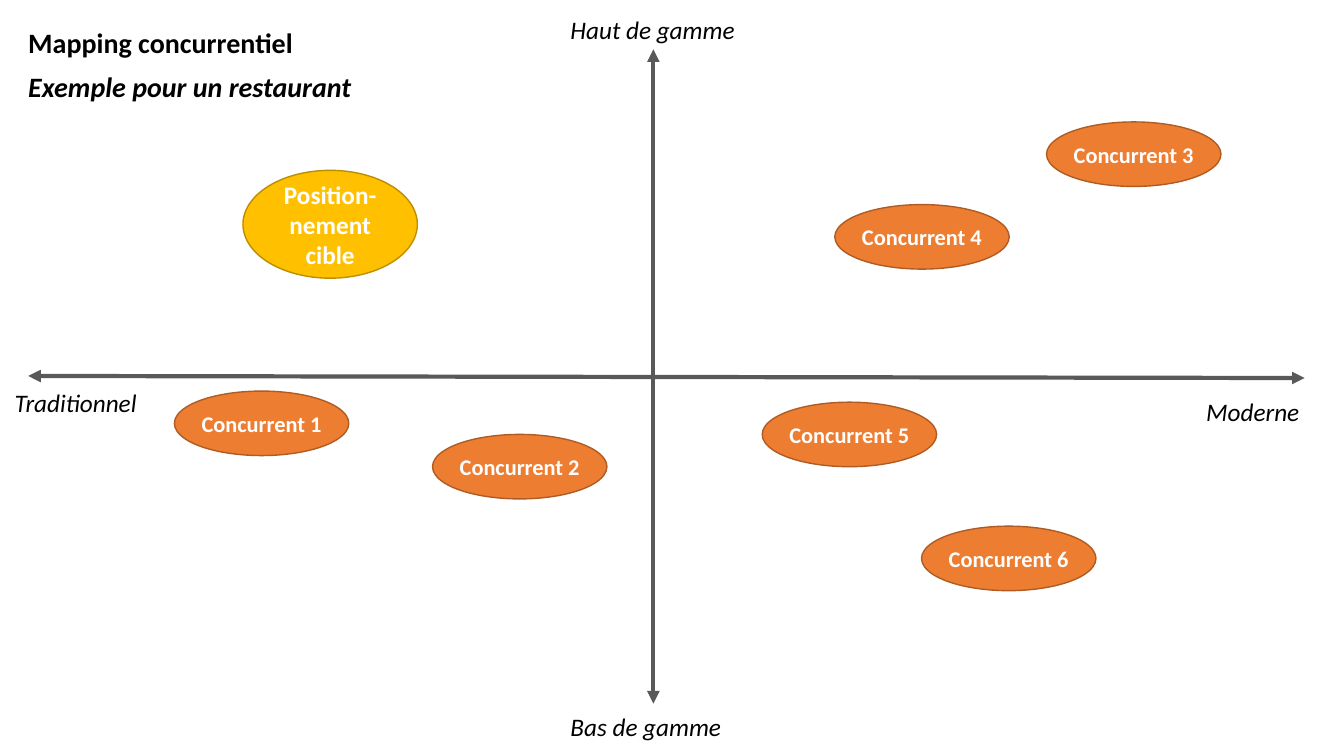
from lxml import etree
from pptx import Presentation
from pptx.dml.color import RGBColor
from pptx.enum.shapes import MSO_CONNECTOR, MSO_SHAPE
from pptx.enum.text import MSO_ANCHOR, MSO_AUTO_SIZE, PP_ALIGN
from pptx.oxml.ns import qn
from pptx.util import Inches, Pt

STRAIGHT = MSO_CONNECTOR.STRAIGHT
OVAL = MSO_SHAPE.OVAL
TOP, MIDDLE = MSO_ANCHOR.TOP, MSO_ANCHOR.MIDDLE
LEFT, CENTER = PP_ALIGN.LEFT, PP_ALIGN.CENTER

BLACK = RGBColor(0x00, 0x00, 0x00)
WHITE = RGBColor(0xFF, 0xFF, 0xFF)
GREY = RGBColor(0x59, 0x59, 0x59)
ORANGE = RGBColor(0xED, 0x7D, 0x31)
DARK_ORANGE = RGBColor(0xAF, 0x5C, 0x24)
GOLD = RGBColor(0xFF, 0xC0, 0x00)
DARK_GOLD = RGBColor(0xBD, 0x8E, 0x00)

OVAL_WIDTH = 1.73


def format_text(p, size, color, align, bold=False, italic=False):
    p.alignment = align
    for r in p.runs:
        r.font.name = "Calibri"
        r.font.size = Pt(size)
        r.font.color.rgb = color
        r.font.bold = bold
        r.font.italic = italic


prs = Presentation()
prs.slide_width, prs.slide_height = Inches(13.33), Inches(7.5)
s = prs.slides.add_slide(prs.slide_layouts[5])

# Title
title = s.shapes.title
title.left, title.top = Inches(0.18), Inches(0.24)
title.width, title.height = Inches(4.6), Inches(1.41)
tf = title.text_frame
tf.text = "Mapping concurrentiel\nExemple pour un restaurant"
tf.auto_size = MSO_AUTO_SIZE.NONE
tf.vertical_anchor = TOP
for p, italic in zip(tf.paragraphs, (False, True)):
    p.line_spacing = 0.9
    p.space_before = Pt(10)
    format_text(p, 20, BLACK, LEFT, bold=True, italic=italic)

# Axes
for x1, y1, x2, y2 in [(6.48, 0.49, 6.48, 6.98), (12.94, 3.75, 0.28, 3.73)]:
    axis = s.shapes.add_connector(STRAIGHT, Inches(x1), Inches(y1), Inches(x2), Inches(y2))
    axis.line.color.rgb = GREY
    axis.line.width = Pt(3)
    ln = axis.line._get_or_add_ln()
    for end in ("a:headEnd", "a:tailEnd"):
        etree.SubElement(ln, qn(end), type="triangle")
    etree.SubElement(axis._element.spPr, qn("a:effectLst"))

# Axis labels
axis_labels = [
    ("Haut de gamme", 5.56, 0.09, 2.06, LEFT),
    ("Bas de gamme", 5.56, 7.01, 2.06, LEFT),
    ("Moderne", 11.8, 3.88, 1.25, CENTER),
    ("Traditionnel", 0, 3.79, 1.5, CENTER),
]
for text, x, y, width, align in axis_labels:
    label = s.shapes.add_textbox(Inches(x), Inches(y), Inches(width), Inches(0.4))
    tf = label.text_frame
    tf.text = text
    tf.word_wrap = True
    tf.auto_size = MSO_AUTO_SIZE.SHAPE_TO_FIT_TEXT
    format_text(tf.paragraphs[0], 18, BLACK, align, italic=True)

# Competitors and target position
competitors = [(3, 10.38, 1.21), (4, 8.28, 2.03), (5, 7.56, 3.99),
               (6, 9.14, 5.22), (2, 4.29, 4.31), (1, 1.73, 3.88)]
positions = [(f"Concurrent {number}", x, y, 0.64, 16, ORANGE, DARK_ORANGE)
             for number, x, y in competitors]
positions.append(("Position-nement cible", 2.41, 1.69, 1.07, 18, GOLD, DARK_GOLD))
for text, x, y, height, size, fill, outline in positions:
    sp = s.shapes.add_shape(OVAL, Inches(x), Inches(y), Inches(OVAL_WIDTH), Inches(height))
    sp.shadow.inherit = False
    sp.fill.solid()
    sp.fill.fore_color.rgb = fill
    sp.line.color.rgb = outline
    sp.line.width = Pt(1)
    tf = sp.text_frame
    tf.text = text
    tf.word_wrap = True
    tf.vertical_anchor = MIDDLE
    tf.margin_left = tf.margin_right = tf.margin_top = tf.margin_bottom = 0
    format_text(tf.paragraphs[0], size, WHITE, CENTER, bold=True)

prs.save("out.pptx")
